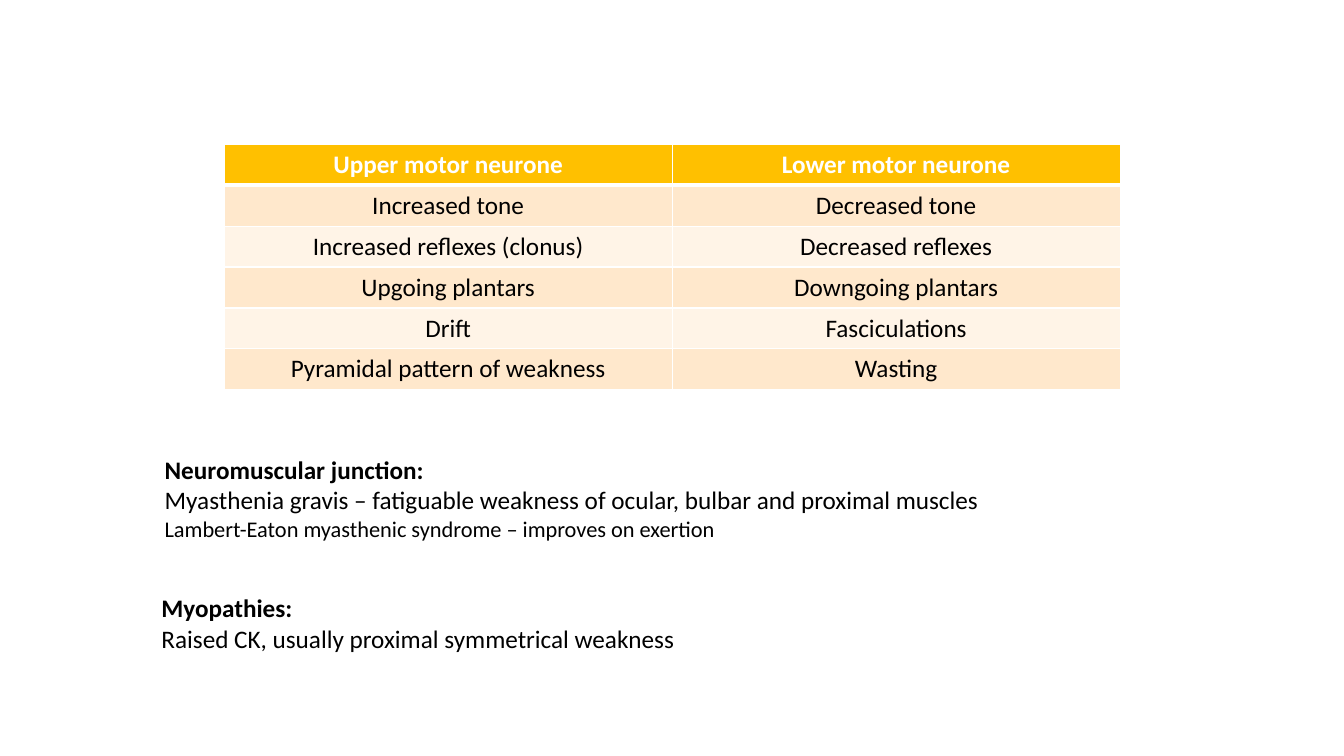
from dataclasses import dataclass

from lxml.etree import SubElement
from pptx import Presentation
from pptx.dml.color import RGBColor as Rgb
from pptx.enum.text import MSO_ANCHOR as Anchor, MSO_AUTO_SIZE as AutoSize, PP_ALIGN as Align
from pptx.oxml.ns import qn
from pptx.util import Cm, Pt


@dataclass(frozen=True)
class Theme:
    font: str = "Calibri"
    size: int = 18
    small: int = 16
    ink: str = "000000"
    white: str = "FFFFFF"
    header: str = "FFC000"
    bands: tuple = ("FFE8CC", "FFF4E7")
    rule: int = 1
    header_rule: int = 3


SIGNS = [
    ("Upper motor neurone", "Lower motor neurone"),
    ("Increased tone", "Decreased tone"),
    ("Increased reflexes (clonus)", "Decreased reflexes"),
    ("Upgoing plantars", "Downgoing plantars"),
    ("Drift", "Fasciculations"),
    ("Pyramidal pattern of weakness", "Wasting"),
]


def write(para, text, *, theme, size=None, color=None, bold=False, align=Align.LEFT):
    para.alignment = align
    span = para.add_run()
    span.text = text
    span.font.name = theme.font
    span.font.size = Pt(size or theme.size)
    span.font.bold = bold
    span.font.color.rgb = Rgb.from_string(color or theme.ink)


def add_borders(cell, color, widths):
    """Draw cell edges; widths maps L, R, T and B, in that order, to points."""
    properties = cell._tc.get_or_add_tcPr()
    for edge, width in widths.items():
        line = SubElement(properties, qn(f"a:ln{edge}"), w=str(Pt(width)))
        fill = SubElement(line, qn("a:solidFill"))
        SubElement(fill, qn("a:srgbClr"), val=color)


class SlideBuilder:
    def __init__(self, page, theme):
        self.page = page
        self.theme = theme

    def table(self, rows, left, top, column_width, row_height):
        """Add a table whose first row is the header and whose body is banded."""
        theme = self.theme
        columns = len(rows[0])
        grid = self.page.shapes.add_table(
            len(rows), columns, Cm(left), Cm(top),
            Cm(column_width * columns), Cm(row_height * len(rows))).table
        for column in grid.columns:
            column.width = Cm(column_width)
        for index, texts in enumerate(rows):
            grid.rows[index].height = Cm(row_height)
            is_header = index == 0
            fill = theme.header if is_header else theme.bands[(index - 1) % 2]
            widths = dict.fromkeys("LRTB", theme.rule)
            if is_header:
                widths["B"] = theme.header_rule
            elif index == 1:
                widths["T"] = theme.header_rule
            for cell, text in zip(grid.rows[index].cells, texts):
                add_borders(cell, theme.white, widths)
                cell.fill.solid()
                cell.fill.fore_color.rgb = Rgb.from_string(fill)
                cell.vertical_anchor = Anchor.TOP
                write(cell.text_frame.paragraphs[0], text, theme=theme, bold=is_header,
                      color=theme.white if is_header else theme.ink, align=Align.CENTER)

    def note(self, heading, lines, left, top, width, height):
        """Add a bold heading over lines given as (text, size) pairs."""
        box = self.page.shapes.add_textbox(Cm(left), Cm(top), Cm(width), Cm(height))
        frame = box.text_frame
        frame.word_wrap = True
        frame.auto_size = AutoSize.SHAPE_TO_FIT_TEXT
        write(frame.paragraphs[0], heading, theme=self.theme, bold=True)
        for text, size in lines:
            write(frame.add_paragraph(), text, theme=self.theme, size=size)


def main():
    deck = Presentation()
    deck.slide_width, deck.slide_height = Cm(33.87), Cm(19.05)
    theme = Theme()
    builder = SlideBuilder(deck.slides.add_slide(deck.slide_layouts[6]), theme)
    builder.table(SIGNS, left=5.65, top=3.64, column_width=11.29, row_height=1.03)
    builder.note("Neuromuscular junction:", [
        ("Myasthenia gravis – fatiguable weakness of ocular, bulbar and proximal muscles",
         theme.size),
        ("Lambert-Eaton myasthenic syndrome – improves on exertion", theme.small),
    ], left=3.9, top=11.33, width=24.33, height=2.57)
    builder.note("Myopathies:", [
        ("Raised CK, usually proximal symmetrical weakness", theme.size),
    ], left=3.82, top=14.81, width=24.66, height=1.8)
    deck.save("out.pptx")


if __name__ == "__main__":
    main()
